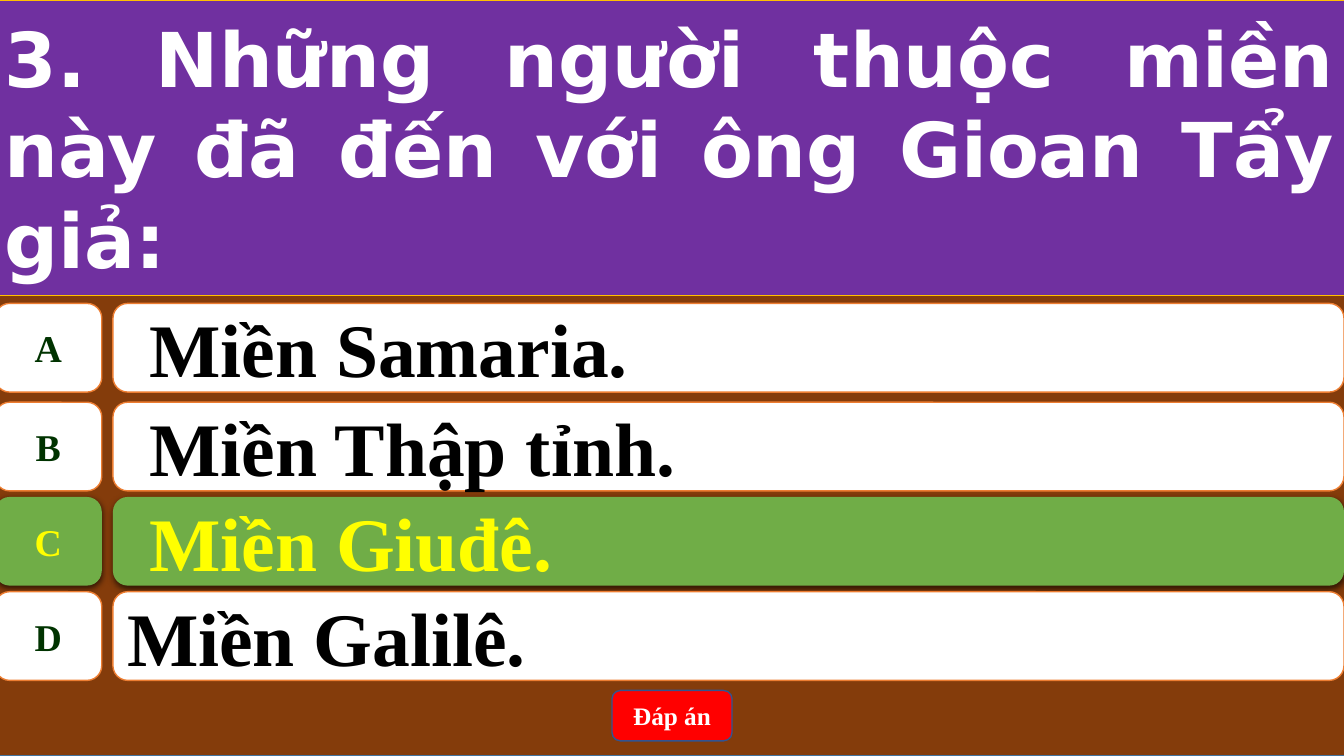
from dataclasses import dataclass

import pptx
import pptx.dml.color
import pptx.enum.shapes
import pptx.enum.text
import pptx.oxml
import pptx.oxml.ns
import pptx.util
from pptx.shapes.autoshape import Shape
from pptx.slide import Slide

Inches = pptx.util.Inches
Pt = pptx.util.Pt
MSO = pptx.enum.shapes.MSO_SHAPE
ALIGN = pptx.enum.text.PP_ALIGN

SERIF = "Times New Roman"
LEFT, WIDTH = -0.05, 13.39
ANSWER_HEIGHT = 0.88
SHADOW = (
    f'<a:outerShdw {pptx.oxml.ns.nsdecls("a")} blurRad="57150" dist="19050" '
    'dir="5400000" algn="ctr" rotWithShape="0">'
    '<a:srgbClr val="000000"><a:alpha val="63000"/></a:srgbClr></a:outerShdw>'
)


@dataclass
class Answer:
    letter: str
    text: str
    top: float
    indented: bool = True
    correct: bool = False


ANSWERS = [
    Answer("A", "Miền Samaria.", 3.01),
    Answer("B", "Miền Thập tỉnh.", 3.99),
    Answer("C", "Miền Giuđê.", 4.93, correct=True),
    Answer("D", "Miền Galilê.", 5.87, indented=False),
]


def rgb(value: str) -> pptx.dml.color.RGBColor:
    return pptx.dml.color.RGBColor.from_string(value)


def add_box(s: Slide, kind: MSO, left: float, top: float, width: float, height: float,
            fill: str, line: str | None, line_width: float = 1) -> Shape:
    sp = s.shapes.add_shape(kind, Inches(left), Inches(top), Inches(width), Inches(height))
    sp.shadow.inherit = False
    sp.fill.solid()
    sp.fill.fore_color.rgb = rgb(fill)
    if line:
        sp.line.color.rgb = rgb(line)
        sp.line.width = Pt(line_width)
    else:
        sp.line.fill.background()
    return sp


def add_text(sp: Shape, text: str, size: float, color: str, align: ALIGN,
             font: str = SERIF, wrap: bool = True) -> None:
    tf = sp.text_frame
    tf.word_wrap = wrap
    tf.vertical_anchor = pptx.enum.text.MSO_ANCHOR.MIDDLE
    p = tf.paragraphs[0]
    p.alignment = align
    r = p.add_run()
    r.text = text
    r.font.name = font
    r.font.size = Pt(size)
    r.font.bold = True
    r.font.color.rgb = rgb(color)


def indent_first_line(sp: Shape, margin: float, indent: float) -> None:
    pPr = sp.text_frame.paragraphs[0]._p.get_or_add_pPr()
    pPr.set("marL", str(Inches(margin)))
    pPr.set("indent", str(Inches(indent)))


def add_shadow(sp: Shape) -> None:
    effects = sp._element.spPr.find(pptx.oxml.ns.qn("a:effectLst"))
    effects.append(pptx.oxml.parse_xml(SHADOW))


def add_answer(s: Slide, answer: Answer) -> None:
    fill, line = ("70AD47", None) if answer.correct else ("FFFFFF", "ED7D31")
    letter_color, text_color = ("FFFF00", "FFFF00") if answer.correct else ("003300", "000000")

    bar = add_box(s, MSO.ROUNDED_RECTANGLE, 1.12, answer.top, 12.21, ANSWER_HEIGHT, fill, line)
    add_text(bar, answer.text, 54, text_color, ALIGN.LEFT)
    if answer.indented:
        indent_first_line(bar, 0.5, -0.28)

    badge = add_box(s, MSO.FLOWCHART_ALTERNATE_PROCESS, LEFT, answer.top, 1.06, ANSWER_HEIGHT,
                    fill, line)
    add_text(badge, answer.letter, 27, letter_color, ALIGN.CENTER, wrap=False)

    if answer.correct:
        add_shadow(bar)
        add_shadow(badge)


def main() -> None:
    prs = pptx.Presentation()
    prs.slide_width, prs.slide_height = Inches(13.33), Inches(7.5)
    s = prs.slides.add_slide(prs.slide_layouts[6])

    add_box(s, MSO.RECTANGLE, LEFT, 0, WIDTH, 7.5, "843C0B", "43739E")

    question = add_box(s, MSO.RECTANGLE, LEFT, 0, WIDTH, 2.93, "7030A0", "FFC000", 0.5)
    add_text(question, "3. Những người thuộc miền này đã đến với ông Gioan Tẩy giả:",
             54, "FFFFFF", ALIGN.JUSTIFY, font="DejaVu Sans")

    for answer in ANSWERS:
        add_answer(s, answer)

    button = add_box(s, MSO.ROUNDED_RECTANGLE, 6.07, 6.85, 1.19, 0.5, "FF0000", "325491")
    add_text(button, "Đáp án", 18, "FFFFFF", ALIGN.CENTER)

    prs.save("out.pptx")


if __name__ == "__main__":
    main()
